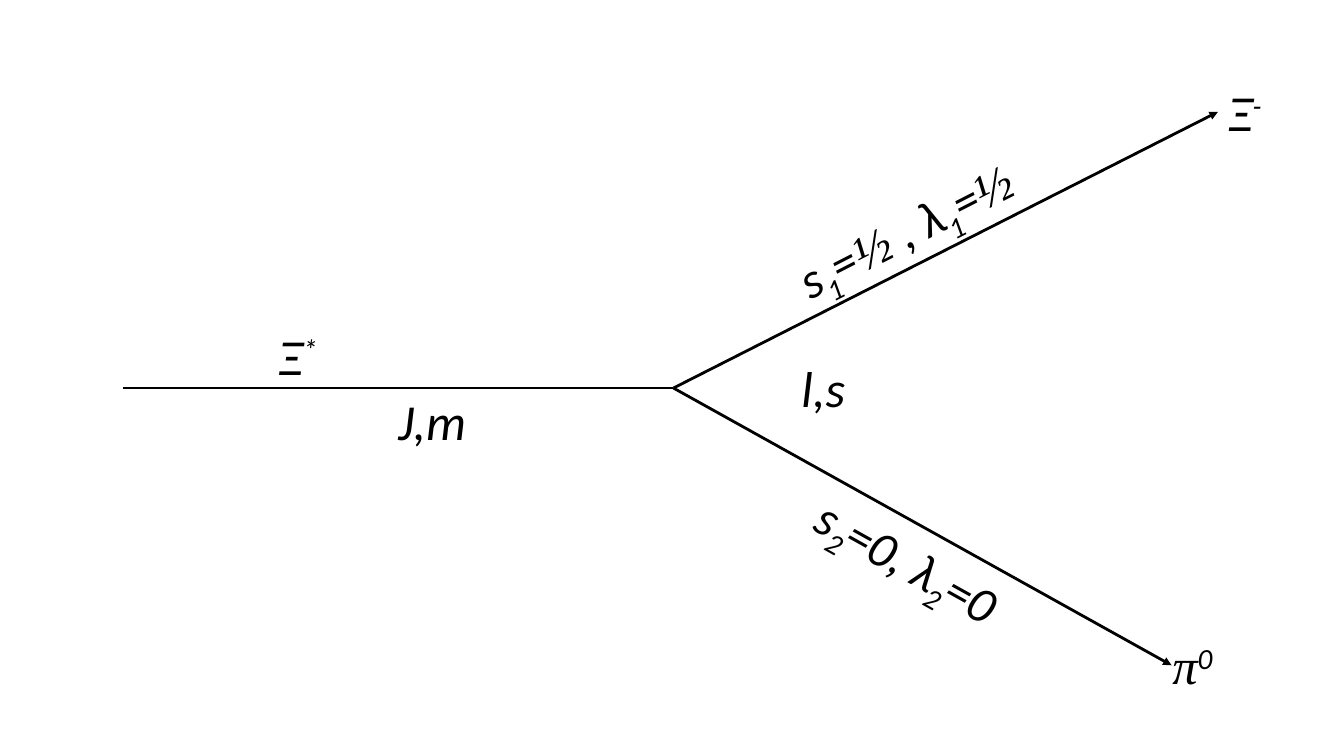
import pptx
import pptx.util
import pptx.dml.color
import pptx.enum.shapes
import pptx.enum.text
import pptx.oxml.ns
import lxml.etree

presentation = pptx.Presentation()
presentation.slide_width = pptx.util.Inches(13.33)
presentation.slide_height = pptx.util.Inches(7.5)
slide = presentation.slides.add_slide(presentation.slide_layouts[6])
column = presentation.slide_width / 100
row = presentation.slide_height / 100


def color(value):
    return pptx.dml.color.RGBColor.from_string(value)


def add_child(parent, tag, **attributes):
    return lxml.etree.SubElement(parent, pptx.oxml.ns.qn(tag), attributes)


ink = "000000"
vertex = (50.11, 51.33)
tracks = [
    ((9.15, 51.33), vertex, False),
    (vertex, (90.62, 14.8), True),
    (vertex, (87.17, 88), True),
]
for start, end, has_arrow in tracks:
    connector = slide.shapes.add_connector(
        pptx.enum.shapes.MSO_CONNECTOR.STRAIGHT,
        round(start[0] * column), round(start[1] * row),
        round(end[0] * column), round(end[1] * row),
    )
    connector.line.color.rgb = color(ink)
    connector.line.width = pptx.util.Pt(2)
    if has_arrow:
        add_child(connector.line._get_or_add_ln(), "a:tailEnd", type="triangle")
    add_child(connector._element.spPr, "a:effectLst")

sans, serif = "Calibri", "Times New Roman"
normal, raised, lowered = 0, 30000, -25000
label_height = 9.47
labels = [
    (19.95, 42.4, 4.65, 0, [("Ξ", sans, normal), ("*", sans, raised)]),
    (28.88, 50.93, 6.68, 0, [("J,m", sans, normal)]),
    (58.89, 46.53, 4.8, 0, [("l,s", sans, normal)]),
    (57.91, 25.47, 19.35, 332.9, [
        ("s", sans, normal), ("1", sans, lowered), ("=", sans, normal),
        ("½", serif, normal), (" , λ", sans, normal), ("1", sans, lowered),
        ("=", sans, normal), ("½", serif, normal),
    ]),
    (59.41, 69.6, 16.65, 29.2, [
        ("s", sans, normal), ("2", sans, lowered), ("=0, λ", sans, normal),
        ("2", sans, lowered), ("=0", sans, normal),
    ]),
    (90.62, 10.13, 4.13, 0, [("Ξ", sans, normal), ("-", sans, raised)]),
    (86.5, 83.2, 4.65, 0, [("π", serif, normal), ("0", sans, raised)]),
]
for left, top, width, rotation, runs in labels:
    label = slide.shapes.add_textbox(
        round(left * column), round(top * row),
        round(width * column), round(label_height * row),
    )
    label.rotation = rotation
    label.text_frame.word_wrap = False
    label.text_frame.auto_size = pptx.enum.text.MSO_AUTO_SIZE.SHAPE_TO_FIT_TEXT
    paragraph = label.text_frame.paragraphs[0]
    for text, typeface, baseline in runs:
        run = paragraph.add_run()
        run.text = text
        run.font.name = typeface
        run.font.size = pptx.util.Pt(36)
        run.font.italic = True
        run.font.color.rgb = color(ink)
        properties = run._r.get_or_add_rPr()
        properties.set("baseline", str(baseline))
        add_child(properties, "a:ea", typeface=typeface)
        add_child(properties, "a:cs", typeface=typeface)

presentation.save("out.pptx")
